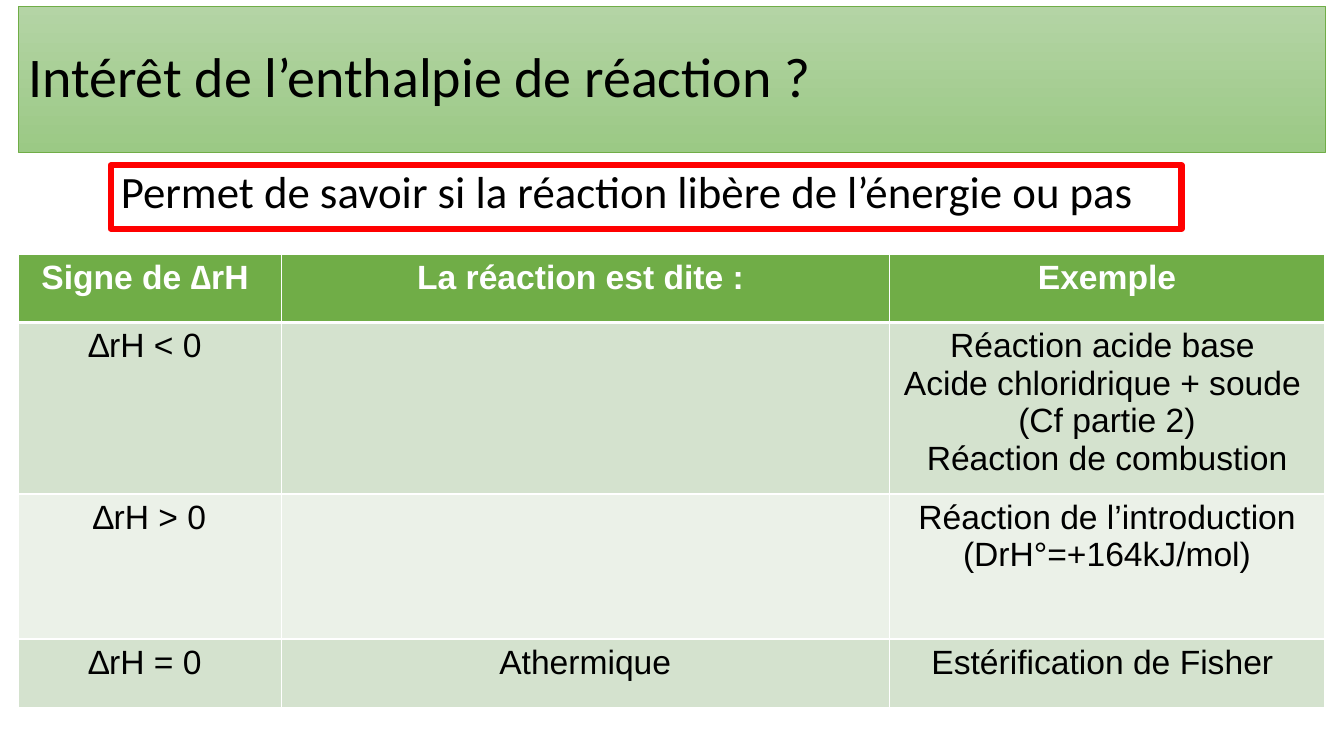
from pptx import Presentation
from pptx.util import Inches, Pt
from pptx.dml.color import RGBColor
from pptx.enum.shapes import MSO_SHAPE as Shape
from pptx.enum.text import PP_ALIGN as Align, MSO_ANCHOR as Anchor, MSO_AUTO_SIZE as Auto
from pptx.oxml.ns import qn
from lxml.etree import SubElement as Sub

GREEN, WHITE, BLACK, RED = "70AD47", "FFFFFF", "000000", "FF0000"
BANDS = ["D4E2CE", "EBF1E8"]
COLS = [2.61, 6.03, 4.32]
HEIGHTS = [0.68, 1.7, 1.44, 0.68]
ROWS = [
    ["Signe de ∆rH ", "La réaction est dite : ", "Exemple"],
    ["∆rH < 0 ", "", "Réaction acide base \nAcide chloridrique + soude \n"
                     "(Cf partie 2)\nRéaction de combustion"],
    ["∆rH > 0", "", "Réaction de l’introduction (DrH°=+164kJ/mol)"],
    ["∆rH = 0 ", "Athermique", "Estérification de Fisher "],
]


def color(code):
    return RGBColor.from_string(code)


def apply(item, form):
    for name, value in form.items():
        setattr(item, name, value)


def write(frame, text, size, code=BLACK, face="Calibri", bold=False, **para):
    frame.text = text
    for par in frame.paragraphs:
        apply(par, para)
        apply(par.font, {"size": Pt(size), "name": face, "bold": bold})
        par.font.color.rgb = color(code)
        for run in par.runs:
            apply(run.font, {"size": Pt(size), "name": face, "bold": bold})
            run.font.color.rgb = color(code)


def outline(shape, code, width):
    shape.line.color.rgb = color(code)
    shape.line.width = Pt(width)


def place(shape, box):
    names = ["left", "top", "width", "height"]
    apply(shape, dict(zip(names, map(Inches, box))))


def banner(slide, box):
    title = slide.shapes.title
    place(title, box)
    # Vertical green gradient
    title.fill.gradient()
    title.fill.gradient_angle = 270
    for stop, code in zip(title.fill.gradient_stops, ["B4D4A5", "9BC985"]):
        stop.color.rgb = color(code)
    outline(title, GREEN, 0.75)
    write(title.text_frame, "Intérêt de l’enthalpie de réaction ?", 40,
          alignment=Align.LEFT, line_spacing=0.9)
    apply(title.text_frame, {"auto_size": Auto.NONE, "word_wrap": True,
                             "vertical_anchor": Anchor.MIDDLE})


def message(slide, box):
    note = slide.shapes.add_shape(Shape.RECTANGLE, *map(Inches, box))
    note.shadow.inherit = False
    note.fill.solid()
    note.fill.fore_color.rgb = color(WHITE)
    outline(note, RED, 4.5)
    write(note.text_frame,
          "Permet de savoir si la réaction libère de l’énergie ou pas", 32,
          alignment=Align.LEFT, line_spacing=0.9)
    apply(note.text_frame, {"word_wrap": True, "vertical_anchor": Anchor.TOP})


def border(cell, row):
    props = cell._tc.get_or_add_tcPr()
    widths = {"L": 1, "R": 1, "T": 3 if row == 1 else 1, "B": 3 if row == 0 else 1}
    for side, width in widths.items():
        line = Sub(props, qn(f"a:ln{side}"), w=str(Pt(width)))
        Sub(Sub(line, qn("a:solidFill")), qn("a:srgbClr"), val=WHITE)


def grid(slide, left, top):
    box = map(Inches, (left, top, sum(COLS), sum(HEIGHTS)))
    table = slide.shapes.add_table(len(ROWS), len(COLS), *box).table
    for col, width in zip(table.columns, COLS):
        col.width = Inches(width)
    for r, (texts, height) in enumerate(zip(ROWS, HEIGHTS)):
        table.rows[r].height = Inches(height)
        head = r == 0
        for c, text in enumerate(texts):
            cell = table.cell(r, c)
            border(cell, r)
            cell.fill.solid()
            cell.fill.fore_color.rgb = color(GREEN if head else BANDS[(r - 1) % 2])
            write(cell.text_frame, text, 24, WHITE if head else BLACK,
                  "Arial", head, alignment=Align.CENTER)


def main():
    deck = Presentation()
    apply(deck, {"slide_width": Inches(13.33), "slide_height": Inches(7.5)})
    slide = deck.slides.add_slide(deck.slide_layouts[5])
    banner(slide, (0.18, 0.06, 12.97, 1.45))
    message(slide, (1.1, 1.64, 10.62, 0.63))
    grid(slide, 0.18, 2.52)
    deck.save("out.pptx")


if __name__ == "__main__":
    main()
